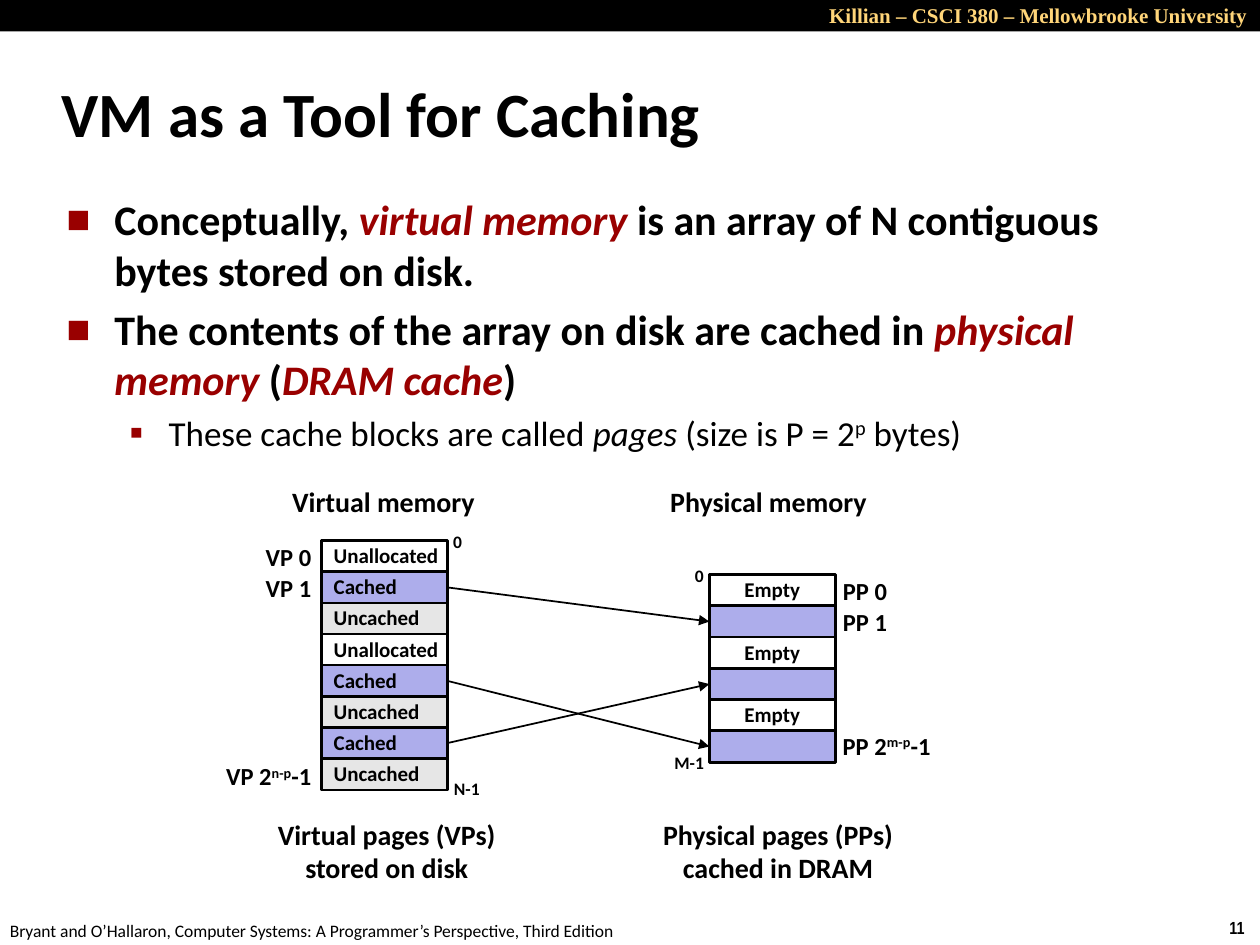
from pptx import Presentation
from pptx.dml.color import RGBColor as Color
from pptx.enum.shapes import MSO_CONNECTOR as Link, MSO_SHAPE as Preset
from pptx.enum.text import MSO_ANCHOR as Anchor, MSO_AUTO_SIZE as Fit, PP_ALIGN as Align
from pptx.oxml.ns import qn
from pptx.util import Inches, Pt
from lxml.etree import SubElement

THEME = {
    "black": "000000", "white": "FFFFFF", "accent": "990000", "gold": "FFD579",
    "cached": "ADADEB", "uncached": "E6E6E6",
    "body_font": "Calibri", "header_font": "Times New Roman", "number_font": "Arial Narrow",
    "title": 36, "bullet": 24, "sub_bullet": 20, "heading": 16, "label": 14,
    "cell": 12, "header": 12, "small": 10,
}

BOLD = {"bold": True}
PLAIN = {}
ITALIC = {"italic": True}
TERM = {"bold": True, "italic": True, "color_name": "accent"}
SUPER = {"raised": True}

TITLE = "VM as a Tool for Caching"
HEADER = "Killian – CSCI 380 – Mellowbrooke University"
CREDIT = "Bryant and O’Hallaron, Computer Systems: A Programmer’s Perspective, Third Edition"
PAGE_NUMBER = "11"

BULLETS = [
    (0, [("Conceptually,", BOLD), (" virtual memory ", TERM),
         ("is an array of N contiguous bytes stored on disk.", BOLD)]),
    (0, [("The contents of the array on disk are cached in ", BOLD), ("physical memory", TERM),
         (" (", BOLD), ("DRAM cache", TERM), (")", BOLD)]),
    (1, [("These cache blocks are called ", PLAIN), ("pages ", ITALIC),
         ("(size is P = 2", PLAIN), ("p", SUPER), (" bytes)", PLAIN)]),
]
LEVELS = [
    {"size": "bullet", "margin": 0.38, "hang": 0.38, "before": 5, "mark": "■", "scale": 60},
    {"size": "sub_bullet", "margin": 0.81, "hang": 0.31, "before": 4, "mark": "▪", "scale": 110},
]

VIRTUAL = {"left": 2.55, "first": 4.29, "last": 6.02, "align": Align.LEFT,
           "rows": ["Unallocated", "Cached", "Uncached", "Unallocated",
                    "Cached", "Uncached", "Cached", "Uncached"]}
PHYSICAL = {"left": 5.63, "first": 4.56, "last": 5.8, "align": Align.CENTER,
            "rows": ["Empty", "", "Empty", "", "Empty", ""]}
CELL_FILLS = {"Unallocated": "white", "Empty": "white", "Cached": "cached",
              "": "cached", "Uncached": "uncached"}
CELL_SIZE = (1, 0.25)
MAPPINGS = [(1, 1), (4, 5), (6, 3)]

SPACED = {"spacing": 0.88, "before": 6}
CENTERED = {"spacing": 0.98, "anchor": Anchor.MIDDLE}
LABELS = [
    ((2.21, 3.83, 1.67, 0.33), ["Virtual memory"], "heading", Align.CENTER, SPACED),
    ((5.21, 3.83, 1.78, 0.33), ["Physical memory"], "heading", Align.CENTER, SPACED),
    ((2.01, 4.28, 0.56, 0.31), ["VP 0"], "label", Align.RIGHT, SPACED),
    ((2.01, 4.53, 0.56, 0.31), ["VP 1"], "label", Align.RIGHT, SPACED),
    ((1.67, 6.02, 0.9, 0.31), [("VP 2", "n-p", "-1")], "label", Align.RIGHT, SPACED),
    ((6.59, 4.53, 0.55, 0.33), ["PP 0"], "label", Align.CENTER, CENTERED),
    ((6.59, 4.78, 0.55, 0.33), ["PP 1"], "label", Align.CENTER, CENTERED),
    ((6.59, 5.78, 0.93, 0.31), [("PP 2", "m-p", "-1")], "label", Align.LEFT, SPACED),
    ((3.49, 4.17, 0.28, 0.27), ["0"], "small", Align.CENTER, CENTERED),
    ((3.5, 6.13, 0.41, 0.27), ["N-1"], "small", Align.CENTER, CENTERED),
    ((5.41, 4.44, 0.28, 0.27), ["0"], "small", Align.CENTER, CENTERED),
    ((5.25, 5.92, 0.44, 0.27), ["M-1"], "small", Align.CENTER, CENTERED),
    ((2.09, 6.45, 1.96, 0.63), ["Virtual pages (VPs) ", "stored on disk"],
     "heading", Align.CENTER, CENTERED),
    ((5.15, 6.45, 2.05, 0.63), ["Physical pages (PPs) ", "cached in DRAM"],
     "heading", Align.CENTER, CENTERED),
]


def color(name):
    return Color.from_string(THEME[name])


def add_span(para, text, size, font="body_font", bold=False, italic=False,
             color_name="black", raised=False):
    span = para.add_run()
    span.text = text
    span.font.name = THEME[font]
    span.font.size = Pt(THEME[size])
    span.font.bold = bold
    span.font.italic = italic
    span.font.color.rgb = color(color_name)
    if raised:
        span._r.get_or_add_rPr().set("baseline", "30000")


def add_text(page, place, wrap=False, anchor=Anchor.TOP, grow=True):
    frame = page.shapes.add_textbox(*map(Inches, place)).text_frame
    frame.word_wrap = wrap
    frame.vertical_anchor = anchor
    frame.auto_size = Fit.SHAPE_TO_FIT_TEXT if grow else Fit.NONE
    return frame


def add_rectangle(page, place, fill, outlined=True):
    box = page.shapes.add_shape(Preset.RECTANGLE, *map(Inches, place))
    box.shadow.inherit = False
    box.fill.solid()
    box.fill.fore_color.rgb = color(fill)
    if outlined:
        box.line.color.rgb = color("black")
        box.line.width = Pt(1.5)
    else:
        box.line.fill.background()
    return box


def add_frame_parts(page):
    add_span(add_text(page, (9.66, 7.23, 0.34, 0.27)).paragraphs[0],
             PAGE_NUMBER, "small", "number_font", bold=True)
    add_span(add_text(page, (-0.02, 7.25, 5.08, 0.27)).paragraphs[0], CREDIT, "small")
    add_rectangle(page, (0, 0, 10, 0.25), "black", outlined=False)
    header = add_text(page, (6.2, -0.03, 3.8, 0.3), wrap=True).paragraphs[0]
    header.alignment = Align.RIGHT
    add_span(header, HEADER, "header", "header_font", bold=True, color_name="gold")
    title = add_text(page, (0.39, 0.48, 8.3, 0.83), True, Anchor.MIDDLE, grow=False)
    add_span(title.paragraphs[0], TITLE, "title", bold=True)


def add_bullets(page):
    frame = add_text(page, (0.43, 1.49, 8.64, 2.26), wrap=True, grow=False)
    for index, (depth, spans) in enumerate(BULLETS):
        para = frame.add_paragraph() if index else frame.paragraphs[0]
        level = LEVELS[depth]
        para.level = depth
        para.space_before = Pt(level["before"])
        props = para._p.get_or_add_pPr()
        props.set("marL", str(Inches(level["margin"])))
        props.set("indent", str(-Inches(level["hang"])))
        tint = SubElement(props, qn("a:buClr"))
        SubElement(tint, qn("a:srgbClr"), val=THEME["accent"])
        SubElement(props, qn("a:buSzPct"), val=str(level["scale"] * 1000))
        SubElement(props, qn("a:buFont"), typeface=THEME["body_font"])
        SubElement(props, qn("a:buChar"), char=level["mark"])
        for text, style in spans:
            add_span(para, text, level["size"], **style)


def add_memory(page, memory):
    pitch = (memory["last"] - memory["first"]) / (len(memory["rows"]) - 1)
    cells = []
    for index, state in enumerate(memory["rows"]):
        place = (memory["left"], memory["first"] + index * pitch, *CELL_SIZE)
        cell = add_rectangle(page, place, CELL_FILLS[state])
        if state:
            cell.text_frame.word_wrap = False
            cell.text_frame.vertical_anchor = Anchor.MIDDLE
            para = cell.text_frame.paragraphs[0]
            para.alignment = memory["align"]
            para.line_spacing = 0.98
            add_span(para, state, "cell", bold=True)
        cells.append(cell)
    return cells


def add_arrow(page, source, target):
    arrow = page.shapes.add_connector(Link.STRAIGHT, 0, 0, 0, 0)
    arrow.begin_connect(source, 3)
    arrow.end_connect(target, 1)
    arrow.line.color.rgb = color("black")
    arrow.line.width = Pt(1)
    SubElement(arrow.line._get_or_add_ln(), qn("a:tailEnd"), type="triangle")
    SubElement(arrow._element.spPr, qn("a:effectLst"))


def add_label(page, place, lines, size, align, style):
    frame = add_text(page, place, anchor=style.get("anchor", Anchor.TOP))
    for index, line in enumerate(lines):
        para = frame.add_paragraph() if index else frame.paragraphs[0]
        para.alignment = align
        para.line_spacing = style["spacing"]
        para.space_before = Pt(style.get("before", 0))
        parts = (line,) if isinstance(line, str) else line
        for position, text in enumerate(parts):
            add_span(para, text, size, bold=True, raised=position == 1)


def main():
    deck = Presentation()
    deck.slide_width, deck.slide_height = Inches(10), Inches(7.5)
    page = deck.slides.add_slide(deck.slide_layouts[6])
    add_frame_parts(page)
    add_bullets(page)
    virtual_cells = add_memory(page, VIRTUAL)
    physical_cells = add_memory(page, PHYSICAL)
    for source, target in MAPPINGS:
        add_arrow(page, virtual_cells[source], physical_cells[target])
    for label in LABELS:
        add_label(page, *label)
    deck.save("out.pptx")


if __name__ == "__main__":
    main()
